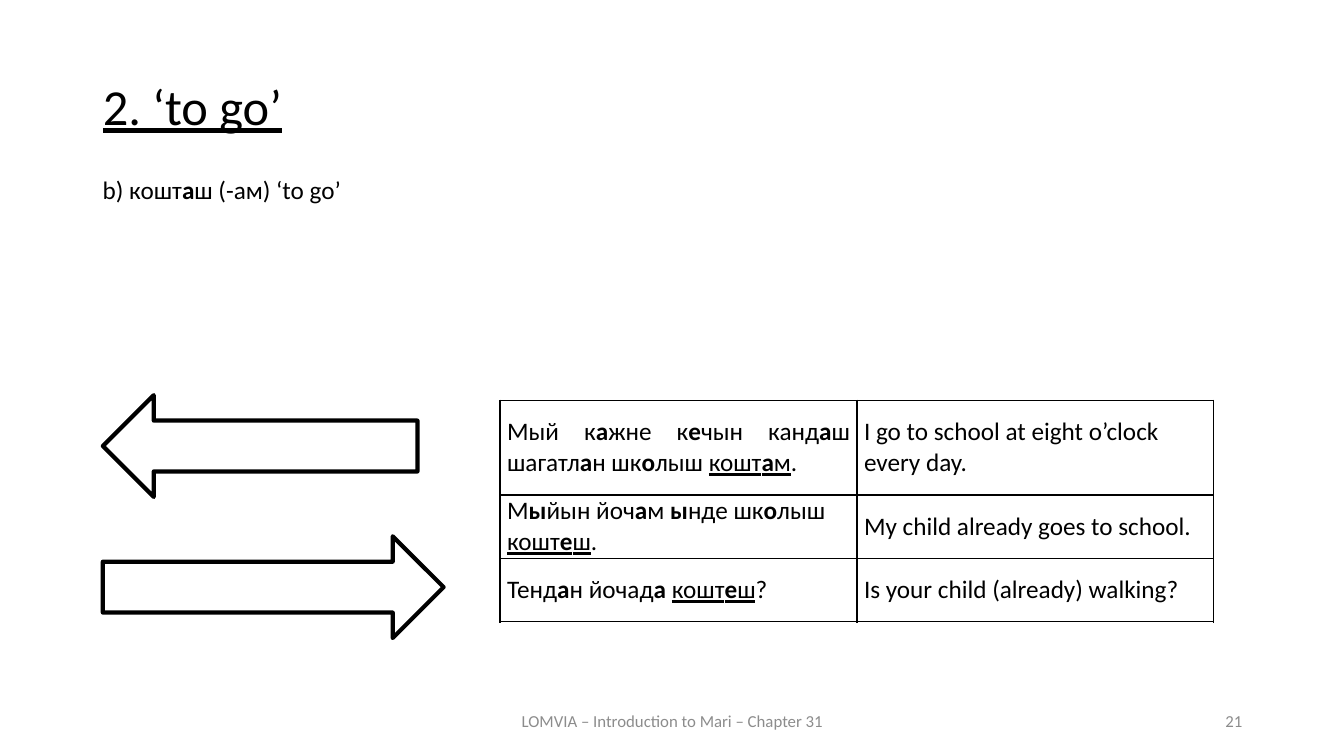
"""Build the slide on the verb 'to go' with its example table and arrows."""
import dataclasses
import typing

import pptx
import pptx.dml.color
import pptx.enum.shapes
import pptx.enum.text
import pptx.oxml
import pptx.oxml.ns
import pptx.util

Inches = pptx.util.Inches
Pt = pptx.util.Pt
RGBColor = pptx.dml.color.RGBColor
Align = pptx.enum.text.PP_ALIGN
Anchor = pptx.enum.text.MSO_ANCHOR
Kind = pptx.enum.shapes.MSO_SHAPE

BLACK = RGBColor(0, 0, 0)
GRAY = RGBColor(0x8C, 0x8C, 0x8C)
FONT = "Calibri"


@dataclasses.dataclass(frozen=True)
class Label:
    text: str
    left: float
    top: float
    width: float
    size: int
    color: RGBColor
    align: Align
    anchor: Anchor


@dataclasses.dataclass(frozen=True)
class Arrow:
    kind: Kind
    top: float
    width: float


@dataclasses.dataclass(frozen=True)
class Row:
    mari: str
    english: str
    height: float
    align: Align = Align.LEFT


LABELS = (
    Label("b) кошт*а*ш (-ам) ‘to go’", 0.92, 1.68, 5.17, 18, BLACK, Align.LEFT, Anchor.TOP),
    Label("LOMVIA – Introduction to Mari – Chapter 31", 4.42, 6.95, 4.5, 12, GRAY,
          Align.CENTER, Anchor.MIDDLE),
    Label("21", 9.42, 6.95, 3, 12, GRAY, Align.RIGHT, Anchor.MIDDLE),
)
ARROWS = (Arrow(Kind.LEFT_ARROW, 3.92, 3.12), Arrow(Kind.RIGHT_ARROW, 5.32, 3.38))
ROWS = (
    Row("Мый к*а*жне к*е*чын канд*а*ш шагатл*а*н шк*о*лыш _кошт*а*м_.",
        "I go to school at eight o’clock every day.", 0.94, Align.JUSTIFY),
    Row("М*ы*йын йоч*а*м *ы*нде шк*о*лыш _кошт*е*ш_.",
        "My child already goes to school.", 0.63),
    Row("Тенд*а*н йочад*а* _кошт*е*ш_?", "Is your child (already) walking?", 0.63),
)


def write(frame: typing.Any, text: str, *, size: int = 18, color: RGBColor = BLACK,
          align: Align = Align.LEFT) -> typing.Any:
    """Write text in which *stars* mark bold and _bars_ mark underline."""
    para = frame.paragraphs[0]
    para.alignment = align
    for bar, chunk in enumerate(text.split("_")):
        for star, part in enumerate(chunk.split("*")):
            if part:
                run = para.add_run()
                run.text = part
                font = run.font
                font.name, font.size = FONT, Pt(size)
                font.color.rgb = color
                font.bold = star % 2 == 1
                font.underline = bar % 2 == 1
    return para


def add_title(slide: typing.Any) -> None:
    """Fill and place the title."""
    title = slide.shapes.title
    title.left, title.top = Inches(0.92), Inches(0.76)
    title.width, title.height = Inches(11.5), Inches(0.83)
    frame = title.text_frame
    frame.auto_size = pptx.enum.text.MSO_AUTO_SIZE.NONE
    frame.vertical_anchor = Anchor.TOP
    para = write(frame, "_2. ‘to go’_", size=36, align=Align.JUSTIFY)
    para.line_spacing = 0.9
    para.space_before = Pt(12)


def add_label(slide: typing.Any, label: Label) -> None:
    """Add one text box."""
    box = slide.shapes.add_textbox(Inches(label.left), Inches(label.top),
                                   Inches(label.width), Inches(0.4))
    frame = box.text_frame
    frame.word_wrap = True
    frame.vertical_anchor = label.anchor
    write(frame, label.text, size=label.size, color=label.color, align=label.align)


def add_arrow(slide: typing.Any, arrow: Arrow) -> None:
    """Add one outlined block arrow."""
    shape = slide.shapes.add_shape(arrow.kind, Inches(1.02), Inches(arrow.top),
                                   Inches(arrow.width), Inches(1.01))
    shape.shadow.inherit = False
    shape.fill.background()
    shape.line.color.rgb = BLACK
    shape.line.width = Pt(3)


def frame_cell(cell: typing.Any) -> None:
    """Give a cell thin borders on all sides and no fill."""
    props = cell._tc.get_or_add_tcPr()
    for side in ("lnL", "lnR", "lnT", "lnB"):
        props.append(pptx.oxml.parse_xml(
            f'<a:{side} {pptx.oxml.ns.nsdecls("a")} w="{Pt(1)}"><a:solidFill>'
            f'<a:srgbClr val="{BLACK}"/></a:solidFill></a:{side}>'))
    cell.fill.background()


def add_grid(slide: typing.Any) -> None:
    """Add the table of examples and translations."""
    table = slide.shapes.add_table(len(ROWS), 2, Inches(4.96), Inches(3.97), Inches(7.08),
                                   Inches(sum(row.height for row in ROWS))).table
    table.first_row = table.horz_banding = False
    for line, row in zip(table.rows, ROWS):
        line.height = Inches(row.height)
        texts = ((row.mari, row.align), (row.english, Align.LEFT))
        for cell, (text, align) in zip(line.cells, texts):
            cell.margin_left = cell.margin_right = Inches(0.07)
            cell.margin_top = cell.margin_bottom = 0
            cell.vertical_anchor = Anchor.MIDDLE
            frame_cell(cell)
            write(cell.text_frame, text, align=align)


def main() -> None:
    """Build and save the slide."""
    deck = pptx.Presentation()
    deck.slide_width, deck.slide_height = Inches(13.33), Inches(7.5)
    slide = deck.slides.add_slide(deck.slide_layouts[5])
    add_title(slide)
    for label in LABELS:
        add_label(slide, label)
    add_grid(slide)
    for arrow in ARROWS:
        add_arrow(slide, arrow)
    deck.save("out.pptx")


if __name__ == "__main__":
    main()
